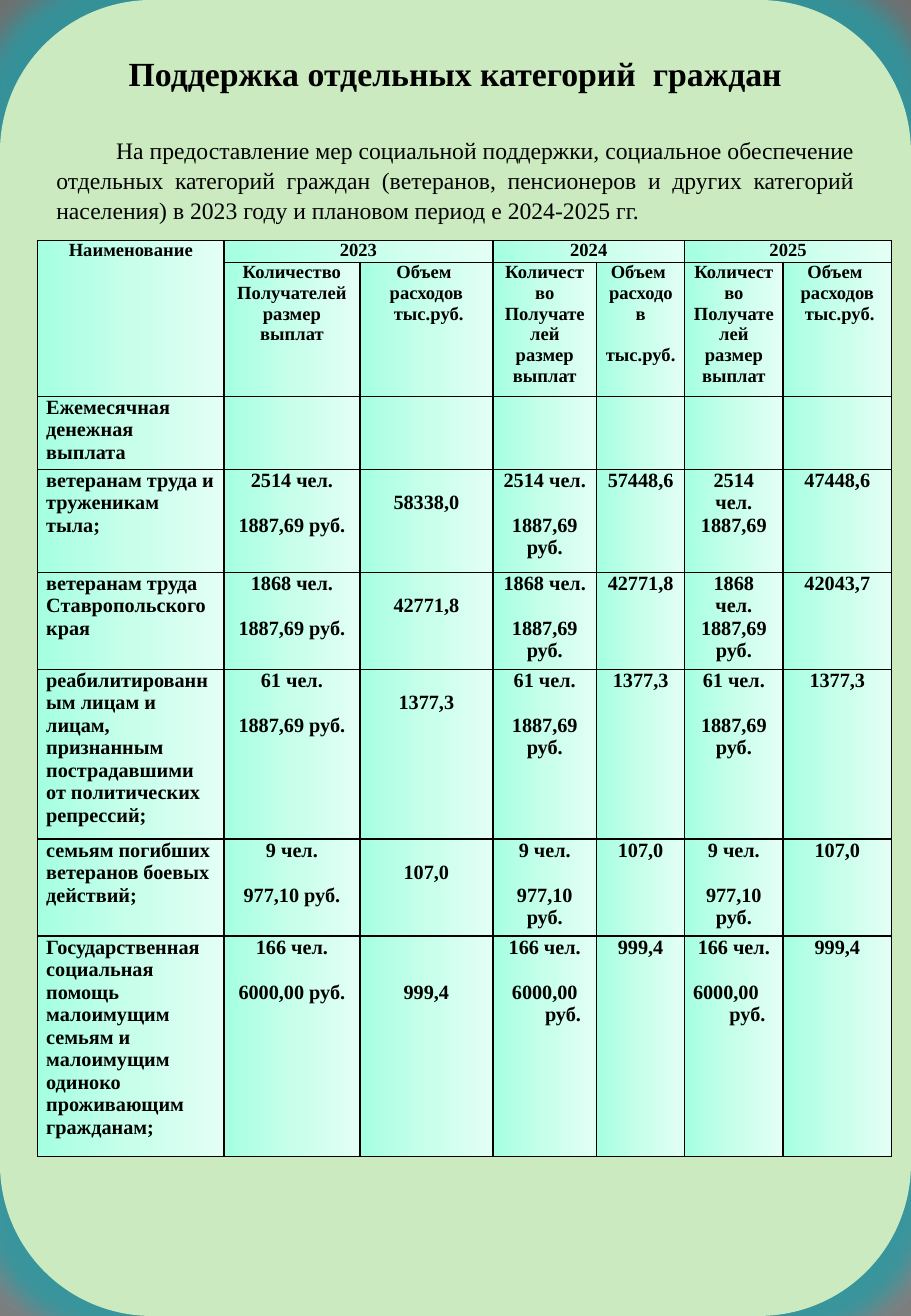
"""Builds a slide on social support for categories of citizens, 2023-2025."""
import pptx
import pptx.util
import pptx.dml.color
import pptx.enum.shapes
import pptx.enum.text
import pptx.oxml
import pptx.oxml.ns

Pt = pptx.util.Pt
RGBColor = pptx.dml.color.RGBColor
ALIGN = pptx.enum.text.PP_ALIGN
BLACK = RGBColor(0x00, 0x00, 0x00)
WHITE = RGBColor(0xFF, 0xFF, 0xFF)
GRAY = RGBColor(0x70, 0x70, 0x70)
LEAF = RGBColor(0xCB, 0xEA, 0xC0)
TEAL = RGBColor(0x2B, 0x97, 0xA0)
MINT = RGBColor(0xA5, 0xFF, 0xE1)
MINT_MID = RGBColor(0xC7, 0xFF, 0xEB)
MINT_PALE = RGBColor(0xE3, 0xFF, 0xF5)
WIDTH, HEIGHT = 540, 779.76
LINE = 13.3
INDENT = 21.6

TITLE = "Поддержка отдельных категорий  граждан"
INTRO = ("На предоставление мер социальной поддержки, социальное обеспечение отдельных "
         "категорий граждан (ветеранов, пенсионеров и других категорий населения) "
         "в 2023 году и плановом период е 2024-2025 гг.")
YEARS = ["2023", "2024", "2025"]
COUNT_HEAD = ["Количество", "Получателей", "размер", "выплат"]
SUM_HEAD = ["Объем ", "расходов", " тыс.руб."]
GROUP = "Ежемесячная денежная выплата"
BENEFITS = [
    ("ветеранам труда и труженикам тыла;", "2514 чел.",
     ["1887,69 руб.", "1887,69 руб.", "1887,69"], ["58338,0", "57448,6", "47448,6"]),
    ("ветеранам труда Ставропольского края", "1868 чел.",
     ["1887,69 руб."] * 3, ["42771,8", "42771,8", "42043,7"]),
    ("реабилитированным лицам и лицам, признанным пострадавшими от политических репрессий;",
     "61 чел.", ["1887,69 руб."] * 3, ["1377,3"] * 3),
    ("семьям погибших ветеранов боевых действий;", "9 чел.",
     ["977,10 руб."] * 3, ["107,0"] * 3),
    ("Государственная социальная помощь малоимущим семьям и малоимущим одиноко "
     "проживающим гражданам;", "166 чел.", ["6000,00 руб."] * 3, ["999,4"] * 3),
]
COLUMNS = [110.4, 80.6, 78.8, 61.6, 52.1, 58.4, 64.3]
ROWS = [13, 79.4, 43.3, 61, 57.5, 100.7, 57.5, 130.4]


def write(p, text, size=12, bold=True, align=ALIGN.CENTER, before=0, spacing=None,
          left=0, first=0):
    """Fill one paragraph with formatted text."""
    p.alignment = align
    p.space_before = Pt(before)
    if spacing:
        p.line_spacing = spacing
    if left or first:
        pPr = p._p.get_or_add_pPr()
        pPr.set("marL", str(Pt(left)))
        pPr.set("indent", str(Pt(first)))
    r = p.add_run()
    r.text = text
    r.font.name = "Times New Roman"
    r.font.size = Pt(size)
    r.font.bold = bold
    r.font.color.rgb = BLACK


def element(xml):
    """Parse a drawing element after declaring its namespaces."""
    head, rest = xml.split(">", 1)
    names = pptx.oxml.ns.nsdecls("a", "p")
    if head.endswith("/"):
        return pptx.oxml.parse_xml(f"{head[:-1]} {names}/>{rest}")
    return pptx.oxml.parse_xml(f"{head} {names}>{rest}")


def gradient(stops, course):
    """Return the XML of a gradient fill."""
    gs = "".join(f'<a:gs pos="{pos * 1000}"><a:srgbClr val="{color}"/></a:gs>'
                 for pos, color in stops)
    return f'<a:gradFill rotWithShape="1"><a:gsLst>{gs}</a:gsLst>{course}</a:gradFill>'


class Builder:
    """Holds the presentation, the current slide and the cell style."""

    def __init__(self):
        self.prs = pptx.Presentation()
        self.prs.slide_width, self.prs.slide_height = Pt(WIDTH), Pt(HEIGHT)
        self.s = self.prs.slides.add_slide(self.prs.slide_layouts[6])
        self.cell_fill = gradient([(0, MINT), (50, MINT_MID), (100, MINT_PALE)],
                                  '<a:lin ang="0" scaled="1"/>')

    def background(self):
        """Give the slide a circular gray gradient."""
        course = ('<a:path path="circle"><a:fillToRect l="10000" t="110000" '
                  'r="10000" b="100000"/></a:path>')
        fill = gradient([(0, WHITE), (25, WHITE), (100, GRAY)], course)
        bg = element(f"<p:bg><p:bgPr>{fill}<a:effectLst/></p:bgPr></p:bg>")
        self.s._element.cSld.insert(0, bg)

    def panel(self):
        """Draw the glowing rounded panel with the title and the introduction."""
        sp = self.s.shapes.add_shape(pptx.enum.shapes.MSO_SHAPE.ROUNDED_RECTANGLE,
                                     0, 0, Pt(WIDTH), Pt(HEIGHT))
        sp.shadow.inherit = False
        sp.fill.solid()
        sp.fill.fore_color.rgb = LEAF
        sp.line.fill.background()
        effects = sp._element.spPr.find(pptx.oxml.ns.qn("a:effectLst"))
        effects.append(element(f'<a:glow rad="{Pt(30)}"><a:srgbClr val="{TEAL}">'
                               '<a:alpha val="85000"/></a:srgbClr></a:glow>'))
        tf = sp.text_frame
        tf.word_wrap = True
        tf.vertical_anchor = pptx.enum.text.MSO_ANCHOR.TOP
        write(tf.paragraphs[0], TITLE, size=20, spacing=1.07)
        write(tf.add_paragraph(), INTRO, size=14, bold=False, align=ALIGN.JUSTIFY,
              before=23.7, spacing=1.07, first=35.4)

    def cell(self, row, col, lines=(), gap=0, top=0, aligns=None, **style):
        """Fill one table cell; the gap stands before each line but the first."""
        cell = self.table.cell(row, col)
        cell.margin_left = cell.margin_right = Pt(5)
        cell.margin_top, cell.margin_bottom = Pt(top), 0
        tcPr = cell._tc.get_or_add_tcPr()
        for side in "LRTB":
            tcPr.append(element(f'<a:ln{side} w="{Pt(1)}"><a:solidFill><a:srgbClr '
                                f'val="{BLACK}"/></a:solidFill></a:ln{side}>'))
        tcPr.append(element(self.cell_fill))
        tf = cell.text_frame
        for i, text in enumerate(lines):
            p = tf.add_paragraph() if i else tf.paragraphs[0]
            if aligns:
                style["align"] = aligns[i]
            write(p, text, before=gap if i else 0, **style)

    def support_table(self):
        """Lay out the table of recipients and spending by year."""
        frame = self.s.shapes.add_table(len(ROWS), len(COLUMNS), Pt(22.4), Pt(142.4),
                                        Pt(sum(COLUMNS)), Pt(sum(ROWS)))
        self.table = frame.table
        for column, width in zip(self.table.columns, COLUMNS):
            column.width = Pt(width)
        for row, height in zip(self.table.rows, ROWS):
            row.height = Pt(height)
        self.cell(0, 0, ["Наименование"], size=11)
        self.cell(1, 0)
        self.cell(2, 0, [GROUP], align=ALIGN.LEFT)
        for row, benefit in enumerate(BENEFITS, 3):
            self.cell(row, 0, [benefit[0]], align=ALIGN.LEFT)
        for i, year in enumerate(YEARS):
            self.year(i, year, 1 + 2 * i)
        self.table.cell(0, 0).merge(self.table.cell(1, 0))

    def year(self, i, year, col):
        """Fill the two columns of one year."""
        self.cell(0, col, [year], size=11)
        self.cell(0, col + 1)
        self.table.cell(0, col).merge(self.table.cell(0, col + 1))
        self.cell(1, col, COUNT_HEAD, size=11)
        self.cell(1, col + 1, SUM_HEAD, size=11)
        self.cell(2, col)
        self.cell(2, col + 1)
        for row, (_, people, payments, sums) in enumerate(BENEFITS, 3):
            last = row == len(ROWS) - 1
            hanging = {"left": INDENT, "first": -INDENT} if last else {}
            payment_align = ALIGN.LEFT if last and i == 2 else ALIGN.CENTER
            self.cell(row, col, [people, payments[i]],
                      gap=0 if i == 2 and row < 5 else LINE,
                      aligns=[ALIGN.CENTER, payment_align], **(hanging if i else {}))
            self.cell(row, col + 1, [sums[i]],
                      top=0 if i else LINE * (2 if last else 1), **hanging)


def main():
    """Build and save the slide."""
    b = Builder()
    b.background()
    b.panel()
    b.support_table()
    b.prs.save("out.pptx")


if __name__ == "__main__":
    main()
